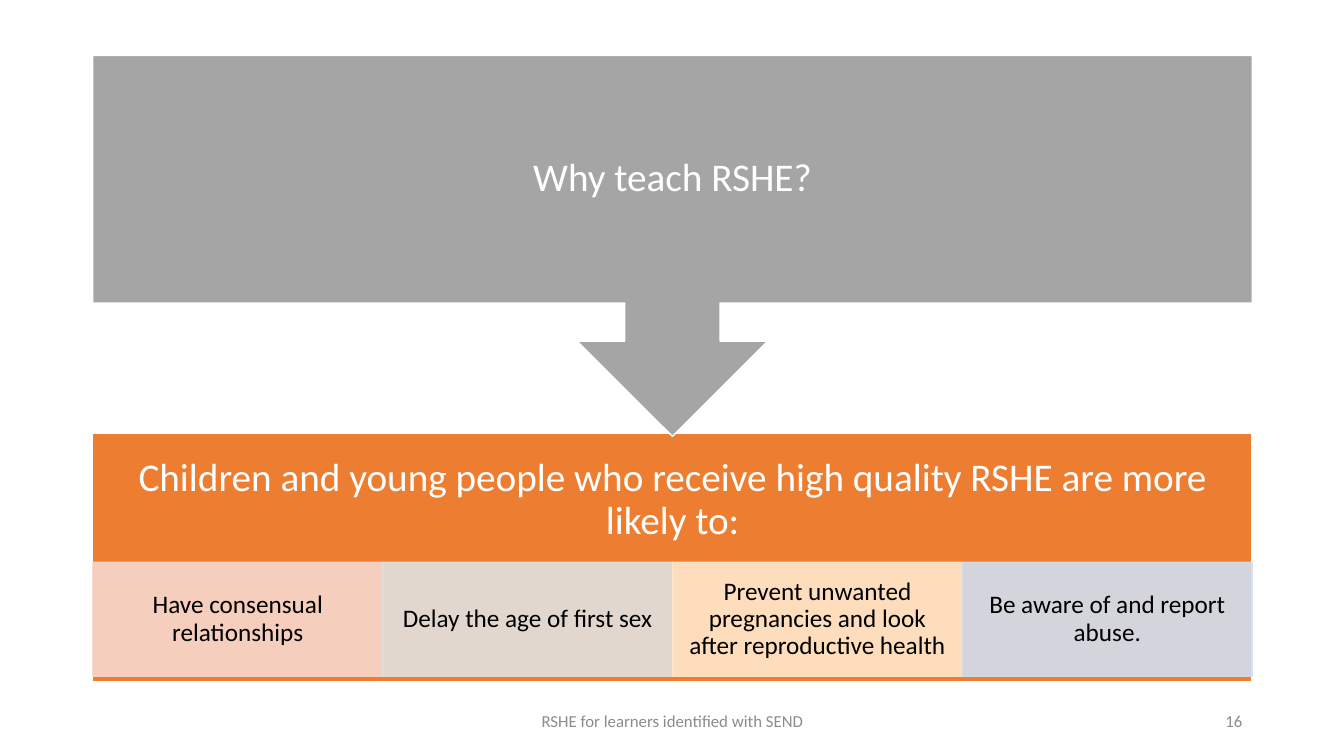
from lxml import etree
from pptx import Presentation
from pptx import util as u
from pptx.dml import color
from pptx.enum import shapes, text
from pptx.oxml import ns

OUTCOMES = [
    ("Have consensual relationships", "F8D7CE"),
    ("Delay the age of first sex", "E1E1E1"),
    ("Prevent unwanted pregnancies and look after reproductive health", "FFE8CC"),
    ("Be aware of and report abuse.", "D2DEEF"),
]


def rgb(value):
    """Return the colour for a hex string."""
    return color.RGBColor.from_string(value)


def write(sp, words, size, hue, margins, align="CENTER", spacing=0.9):
    """Write one paragraph in a shape, with margins as left, top, right, bottom."""
    tf = sp.text_frame
    frame = {"word_wrap": True, "vertical_anchor": text.MSO_ANCHOR.MIDDLE}
    for side, margin in zip(("left", "top", "right", "bottom"), margins):
        frame["margin_" + side] = u.Inches(margin)
    for name, value in frame.items():
        setattr(tf, name, value)
    p = tf.paragraphs[0]
    p.alignment = getattr(text.PP_ALIGN, align)
    p.line_spacing = spacing
    r = p.add_run()
    r.text = words
    for name, value in {"name": "Calibri", "size": u.Pt(size)}.items():
        setattr(r.font, name, value)
    r.font.color.rgb = rgb(hue)


def block(s, kind, box, fill, line, opacity=100):
    """Add a filled and outlined preset shape."""
    sp = s.shapes.add_shape(kind, *map(u.Inches, box))
    sp.shadow.inherit = False
    sp.fill.solid()
    sp.fill.fore_color.rgb = rgb(fill)
    sp.line.color.rgb = rgb(line)
    sp.line.width = u.Pt(1)
    if opacity < 100:
        for hue in sp._element.spPr.iter(ns.qn("a:srgbClr")):
            etree.SubElement(hue, ns.qn("a:alpha"), val=str(opacity * 1000))
    return sp


def question(s, box):
    """Draw the question with its arrow pointing down."""
    sp = block(s, shapes.MSO_SHAPE.DOWN_ARROW_CALLOUT, box, "A5A5A5", "FFFFFF")
    write(sp, "Why teach RSHE?", 28, "FFFFFF", [0.22] * 4)


def answer(s, box):
    """Draw the answer panel with its row of outcomes."""
    left, top, width, height = box
    row_top, row_height = top + 1.28, 1.13
    panel = block(s, shapes.MSO_SHAPE.RECTANGLE, box, "ED7D31", "FFFFFF")
    write(panel, "Children and young people who receive high quality RSHE are more likely to:",
          28, "FFFFFF", (0.22, 0.22, 0.22, height - 1.11))
    cell = width / len(OUTCOMES)
    for i, (words, hue) in enumerate(OUTCOMES):
        sp = block(s, shapes.MSO_SHAPE.RECTANGLE,
                   (left + i * cell, row_top, cell, row_height), hue, hue, 90)
        write(sp, words, 18, "000000", (0.14, 0.03, 0.14, 0.03))


def footer(s, box):
    """Place the footer text in the middle and the page number at the right."""
    left, top, width, height = box
    for words, x, w, align in (
        ("RSHE for learners identified with SEND", left + (width - 4.5) / 2, 4.5, "CENTER"),
        ("16", left + width - 3, 3, "RIGHT"),
    ):
        sp = s.shapes.add_textbox(*map(u.Inches, (x, top, w, height)))
        write(sp, words, 12, "8C8C8C", (0.1, 0.05, 0.1, 0.05), align, 1.0)


def main():
    """Build and save the slide."""
    prs = Presentation()
    prs.slide_width, prs.slide_height = u.Inches(13.33), u.Inches(7.5)
    s = prs.slides.add_slide(prs.slide_layouts[6])
    left, width = 0.92, 11.5
    footer(s, (left, 6.95, width, 0.4))
    answer(s, (left, 4.3, width, 2.46))
    question(s, (left, 0.55, width, 3.78))
    prs.save("out.pptx")


if __name__ == "__main__":
    main()
